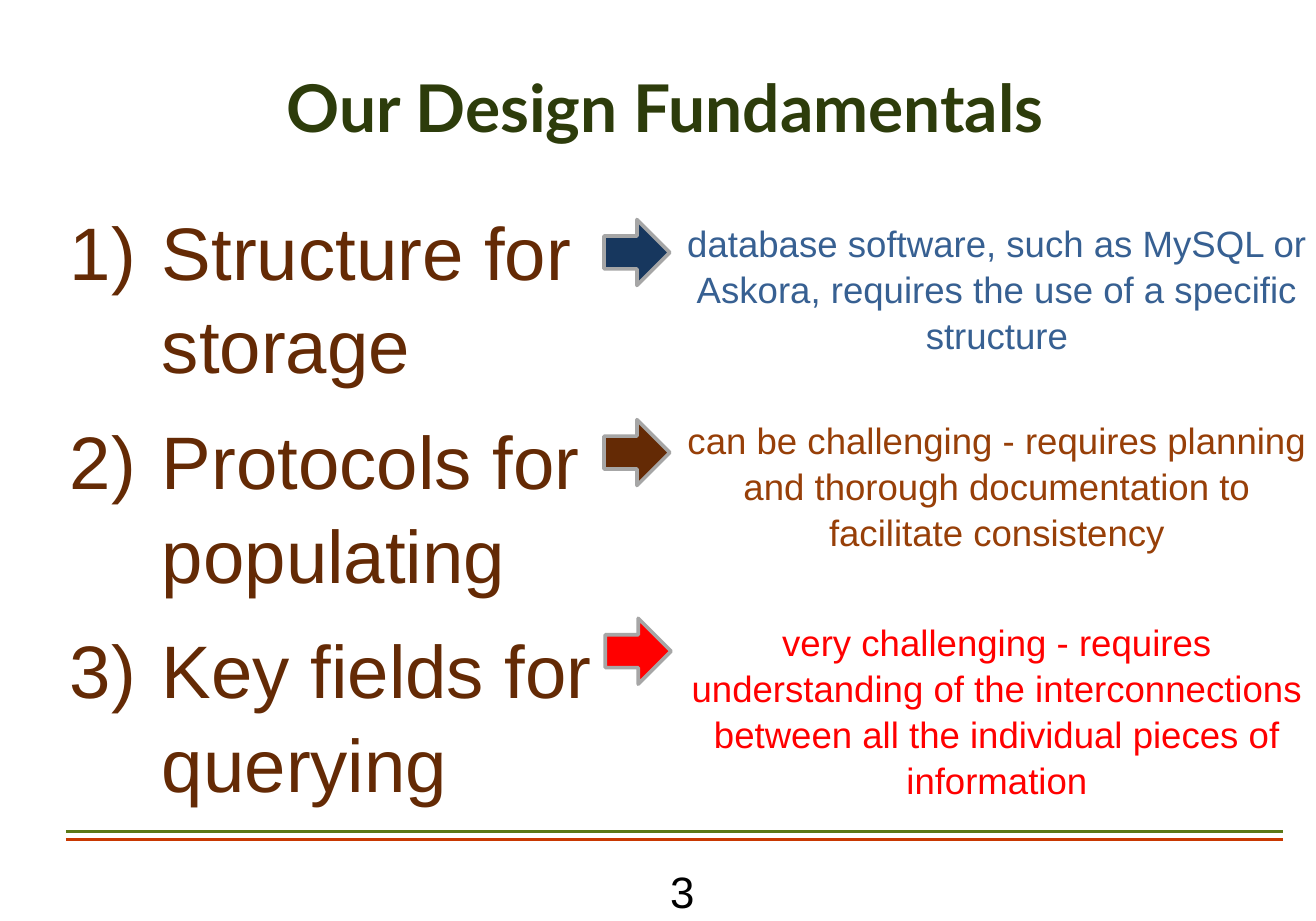
from dataclasses import dataclass

from lxml.etree import SubElement
from pptx import Presentation
from pptx.dml.color import RGBColor
from pptx.enum.shapes import MSO_CONNECTOR as Connector, MSO_SHAPE as Shape
from pptx.enum.text import MSO_ANCHOR as Anchor, MSO_AUTO_SIZE as AutoSize, PP_ALIGN as Align
from pptx.oxml.ns import qn
from pptx.util import Pt


@dataclass(frozen=True)
class Theme:
    title_font: str = "Lato"
    text_font: str = "Arial"
    title_size: float = 36
    list_size: float = 40.7
    note_size: float = 20
    number_size: float = 24
    line_spacing: float = 1.05
    title: str = "2D3C0B"
    brown: str = "642A05"
    navy: str = "17375E"
    blue: str = "376092"
    rust: str = "973F08"
    red: str = "FF0000"
    outline: str = "A6A6A6"
    green_rule: str = "5B7817"
    orange_rule: str = "C83801"
    black: str = "000000"


THEME = Theme()

# item, note, arrow colour, note colour, arrow (left, top), note (top, height)
FUNDAMENTALS = [
    ("Structure for storage",
     "database software, such as MySQL or Askora, requires the use of a specific structure",
     THEME.navy, THEME.blue, (330.5, 120.2), (121, 72.7)),
    ("Protocols for populating",
     "can be challenging - requires planning and thorough documentation to facilitate consistency",
     THEME.brown, THEME.rust, (330.5, 229.7), (229, 72.7)),
    ("Key fields for querying",
     "very challenging - requires understanding of the interconnections "
     "between all the individual pieces of information",
     THEME.red, THEME.red, (331.2, 338.4), (339.8, 97.2)),
]


def rgb(value):
    return RGBColor.from_string(value)


def place(box, left, top, width, height):
    box.left, box.top, box.width, box.height = Pt(left), Pt(top), Pt(width), Pt(height)


def style(para, font, size, colour, align=Align.CENTER, bold=False):
    para.alignment = align
    para.font.name = font
    para.font.size = Pt(size)
    para.font.bold = bold
    para.font.color.rgb = rgb(colour)


def add_rule(page, top, colour):
    rule = page.shapes.add_connector(Connector.STRAIGHT, Pt(36), Pt(top), Pt(702), Pt(top))
    rule.line.color.rgb = rgb(colour)
    rule.line.width = Pt(2)
    SubElement(rule._element.spPr, qn("a:effectLst"))


def set_title(page, text):
    title = page.shapes.title
    place(title, 28.8, 36.7, 670.3, 42.5)
    frame = title.text_frame
    frame.text = text
    frame.auto_size = AutoSize.NONE
    frame.vertical_anchor = Anchor.MIDDLE
    style(frame.paragraphs[0], THEME.title_font, THEME.title_size, THEME.title, bold=True)


def number_para(para, indent):
    """Give a paragraph an automatic 1) number with a hanging indent."""
    properties = para._p.get_or_add_pPr()
    properties.set("marL", str(Pt(indent)))
    properties.set("indent", str(-Pt(indent)))
    colour = SubElement(properties, qn("a:buClr"))
    SubElement(colour, qn("a:srgbClr"), val=THEME.brown)
    SubElement(properties, qn("a:buFont"), typeface=THEME.text_font)
    SubElement(properties, qn("a:buAutoNum"), type="arabicParenR")


def set_numbered_list(page, items):
    body = page.placeholders[1]
    place(body, 31, 106.5, 337, 340)
    frame = body.text_frame
    frame.text = "\n".join(items)
    frame.auto_size = AutoSize.NONE
    for para in frame.paragraphs:
        number_para(para, 50.4)
        para.space_before = Pt(0)
        para.space_after = Pt(12)
        para.line_spacing = THEME.line_spacing
        style(para, THEME.text_font, THEME.list_size, THEME.brown, Align.LEFT)


def add_text(page, text, area, size, colour):
    box = page.shapes.add_textbox(*map(Pt, area))
    frame = box.text_frame
    frame.word_wrap = True
    frame.text = text
    para = frame.paragraphs[0]
    para.line_spacing = THEME.line_spacing
    style(para, THEME.text_font, size, colour)
    return frame


def add_note(page, text, top, height, colour):
    frame = add_text(page, text, (373, top, 344.9, height), THEME.note_size, colour)
    frame.vertical_anchor = Anchor.MIDDLE
    frame.margin_left = frame.margin_right = Pt(1.4)
    frame.margin_top = frame.margin_bottom = Pt(0)


def add_arrow(page, left, top, colour):
    arrow = page.shapes.add_shape(Shape.RIGHT_ARROW, Pt(left), Pt(top), Pt(36), Pt(36))
    arrow.shadow.inherit = False
    arrow.fill.solid()
    arrow.fill.fore_color.rgb = rgb(colour)
    arrow.line.color.rgb = rgb(THEME.outline)
    arrow.line.width = Pt(2)


def main():
    deck = Presentation()
    deck.slide_width, deck.slide_height = Pt(720), Pt(504)
    page = deck.slides.add_slide(deck.slide_layouts[1])

    add_rule(page, 455, THEME.green_rule)
    add_rule(page, 459.4, THEME.orange_rule)
    set_title(page, "Our Design Fundamentals")
    set_numbered_list(page, [row[0] for row in FUNDAMENTALS])
    for _, note, arrow_colour, note_colour, corner, span in FUNDAMENTALS:
        add_note(page, note, *span, note_colour)
        add_arrow(page, *corner, arrow_colour)
    add_text(page, "3", (289.4, 468, 167.8, 28.8), THEME.number_size, THEME.black)

    deck.save("out.pptx")


if __name__ == "__main__":
    main()
